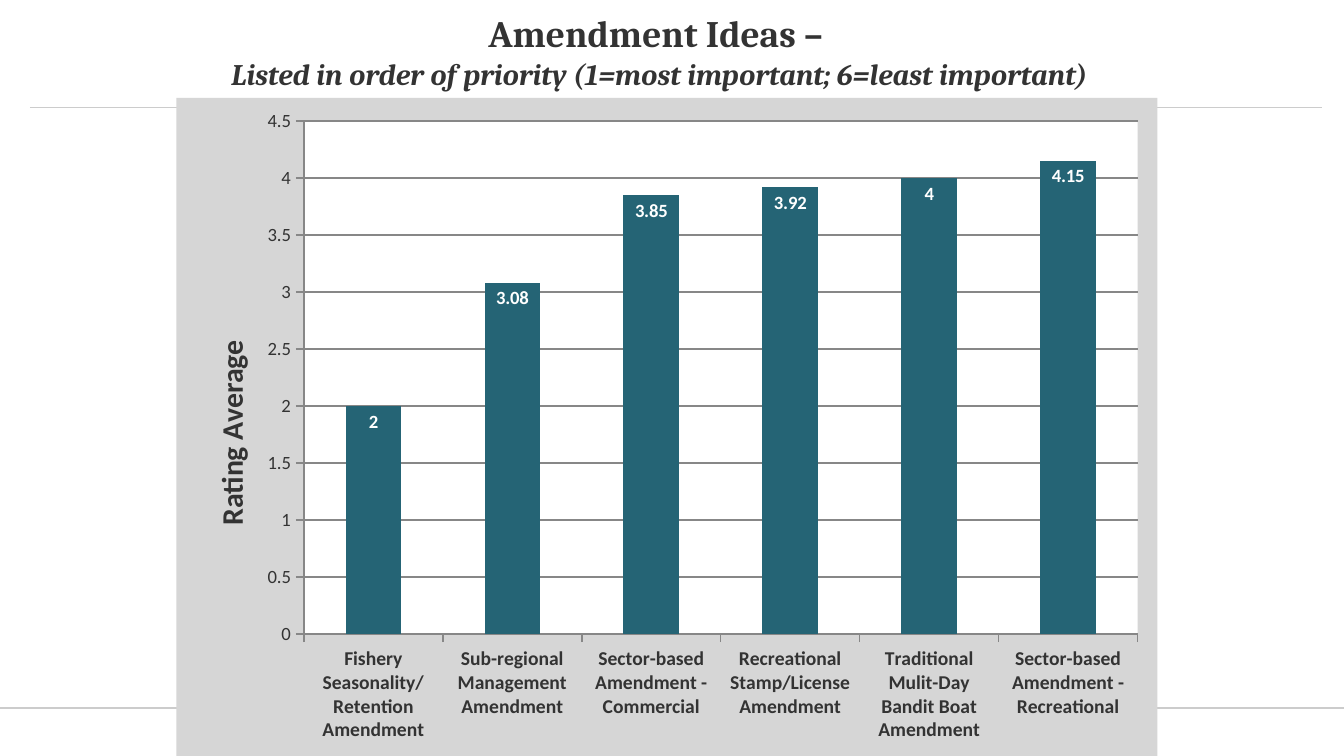
from dataclasses import dataclass
from lxml import etree
from pptx import Presentation
from pptx.chart.data import CategoryChartData
from pptx.dml.color import RGBColor
from pptx.enum.chart import XL_CHART_TYPE, XL_LABEL_POSITION, XL_TICK_MARK
from pptx.enum.shapes import MSO_CONNECTOR
from pptx.enum.text import MSO_ANCHOR, PP_ALIGN
from pptx.oxml import parse_xml
from pptx.oxml.ns import nsdecls, qn
from pptx.util import Pt

TITLE = [
    ("Amendment Ideas – ", 20, False),
    ("Listed in order of priority (1=most important; 6=least important)", 16, True),
]
RATINGS = [
    ("Fishery Seasonality/Retention Amendment", 2),
    ("Sub-regional Management Amendment", 3.08),
    ("Sector-based Amendment - Commercial", 3.85),
    ("Recreational Stamp/License Amendment", 3.92),
    ("Traditional Mulit-Day Bandit Boat Amendment", 4),
    ("Sector-based Amendment - Recreational", 4.15),
]
AXIS = "Rating Average"
RULES = [(0, 720, 379.5, 1), (16, 708, 57.5, 0.5)]


@dataclass
class Theme:
    head: str = "Cambria"
    body: str = "Calibri"
    ink: str = "333333"
    rule: str = "CCCCCC"
    grid: str = "878787"
    panel: str = "D6D6D6"
    paper: str = "FFFFFF"
    bar: str = "256475"
    small: float = 10
    label: float = 10.5
    large: float = 16


theme = Theme()


def rgb(code):
    return RGBColor.from_string(code)


def style(font, name, size, color, bold=False, italic=False):
    font.name, font.size, font.bold, font.italic = name, Pt(size), bold, italic
    font.color.rgb = rgb(color)


def stroke(line, color, width):
    line.color.rgb = rgb(color)
    line.width = Pt(width)


def add_rule(slide, left, right, y, width):
    rule = slide.shapes.add_connector(
        MSO_CONNECTOR.STRAIGHT, Pt(left), Pt(y), Pt(right), Pt(y))
    stroke(rule.line, theme.rule, width)
    etree.SubElement(rule._element.spPr, qn("a:effectLst"))


def fill_xml(color):
    return parse_xml(
        f'<c:spPr {nsdecls("c", "a")}><a:solidFill><a:srgbClr val="{color}"/>'
        '</a:solidFill><a:ln><a:noFill/></a:ln></c:spPr>')


def set_layout(parent, index, inner=False, **box):
    for old in parent.findall(qn("c:layout")):
        parent.remove(old)
    parts = [("layoutTarget", "inner")] if inner else []
    parts += [("xMode", "edge"), ("yMode", "edge"), *box.items()]
    body = "".join(f'<c:{tag} val="{val}"/>' for tag, val in parts)
    parent.insert(index, parse_xml(
        f'<c:layout {nsdecls("c")}><c:manualLayout>{body}'
        '</c:manualLayout></c:layout>'))


def add_title(slide):
    title = slide.shapes.title
    title.left, title.top, title.width, title.height = Pt(29.5), Pt(0), Pt(648), Pt(52.5)
    frame = title.text_frame
    frame.word_wrap = True
    frame.vertical_anchor = MSO_ANCHOR.BOTTOM
    para = frame.paragraphs[0]
    para.alignment = PP_ALIGN.CENTER
    for i, (text, size, italic) in enumerate(TITLE):
        if i:
            para.add_line_break()
        run = para.add_run()
        run.text = text
        style(run.font, theme.head, size, theme.ink, True, italic)


def add_ratings(slide):
    data = CategoryChartData()
    data.categories = [name for name, _ in RATINGS]
    data.add_series("Series 1", [score for _, score in RATINGS])
    chart = slide.shapes.add_chart(
        XL_CHART_TYPE.COLUMN_CLUSTERED, Pt(94.5), Pt(52.5), Pt(525.5), Pt(352.5), data).chart
    chart.has_legend = chart.has_title = False
    style(chart.font, theme.body, theme.small, theme.ink)

    plot = chart.plots[0]
    plot.gap_width = 150
    plot.vary_by_categories = False
    bars = plot.series[0].format.fill
    bars.solid()
    bars.fore_color.rgb = rgb(theme.bar)
    plot.has_data_labels = True
    labels = plot.data_labels
    labels.show_value = True
    labels.position = XL_LABEL_POSITION.INSIDE_END
    style(labels.font, theme.body, theme.small, theme.paper, True)

    cats, vals = chart.category_axis, chart.value_axis
    for axis in (cats, vals):
        axis.major_tick_mark = XL_TICK_MARK.OUTSIDE
        axis.minor_tick_mark = XL_TICK_MARK.NONE
        stroke(axis.format.line, theme.grid, 0.75)
    style(cats.tick_labels.font, theme.body, theme.label, theme.ink, True)
    style(vals.tick_labels.font, theme.body, theme.small, theme.ink)
    vals.minimum_scale, vals.maximum_scale, vals.major_unit = 0, 4.5, 0.5
    vals.has_major_gridlines = True
    stroke(vals.major_gridlines.format.line, theme.grid, 0.75)
    run = vals.axis_title.text_frame.paragraphs[0].add_run()
    run.text = AXIS
    style(run.font, theme.body, theme.large, theme.ink, True)
    body = vals.axis_title.text_frame._txBody.bodyPr
    body.set("rot", "-5400000")
    body.set("vert", "horz")
    set_layout(vals.axis_title._element, 1, x=0.03, y=0.36)

    space = chart._chartSpace
    area = space.chart.plotArea
    set_layout(area, 0, inner=True, x=0.13, y=0.035, w=0.85, h=0.78)
    area.append(fill_xml(theme.paper))
    space.chart.addnext(fill_xml(theme.panel))


def main():
    deck = Presentation()
    deck.slide_width, deck.slide_height = Pt(720), Pt(405)
    slide = deck.slides.add_slide(deck.slide_layouts[5])
    for rule in RULES:
        add_rule(slide, *rule)
    add_ratings(slide)
    add_title(slide)
    deck.save("out.pptx")


if __name__ == "__main__":
    main()
